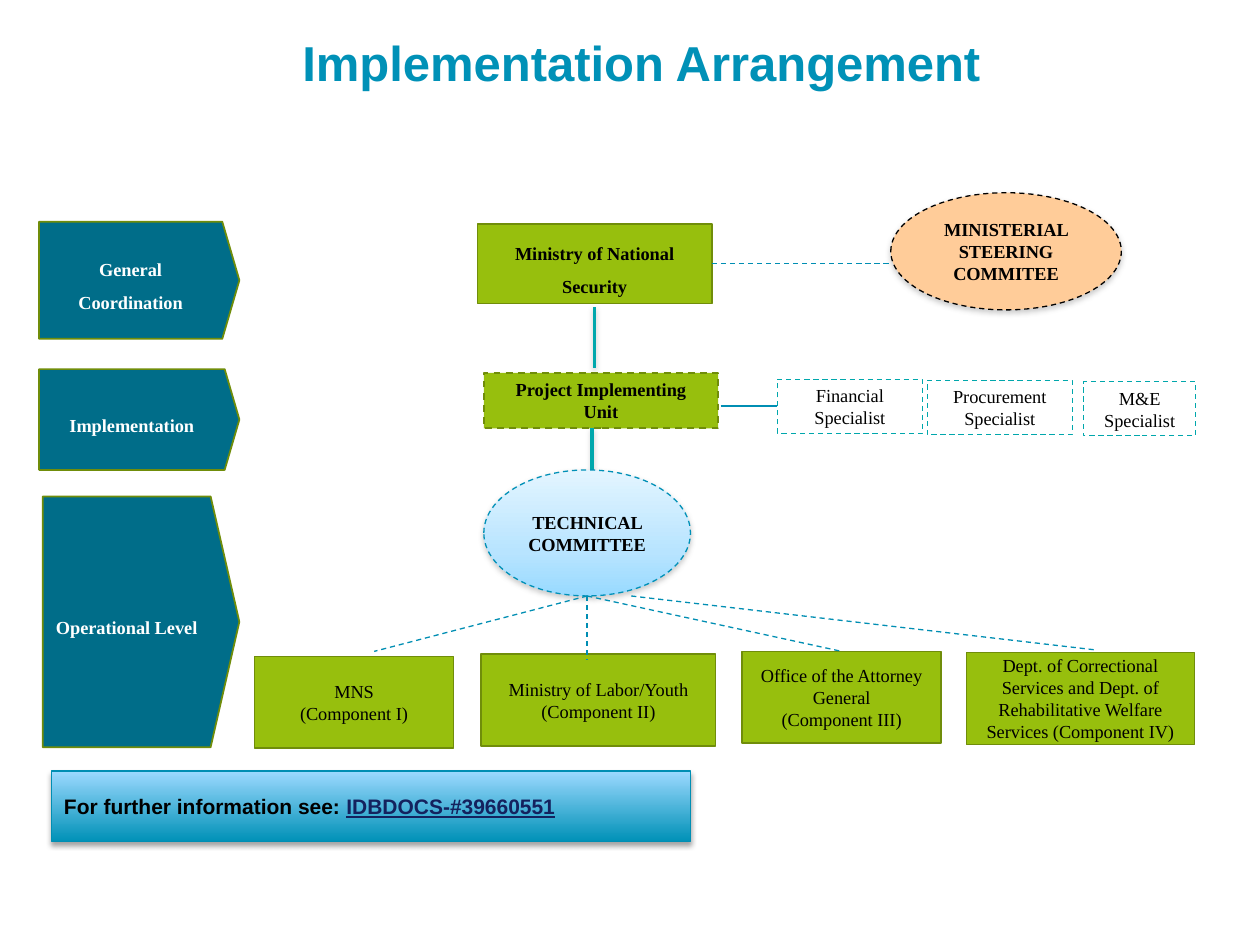
from copy import deepcopy
from dataclasses import dataclass

from pptx import Presentation
from pptx.dml.color import RGBColor
from pptx.enum.dml import MSO_LINE
from pptx.enum.shapes import MSO_CONNECTOR, MSO_SHAPE
from pptx.enum.text import MSO_ANCHOR, PP_ALIGN
from pptx.oxml import parse_xml
from pptx.oxml.ns import nsdecls, qn
from pptx.util import Inches, Pt


@dataclass(frozen=True)
class Theme:
    title: str = "0091B7"
    level: str = "006D89"
    unit: str = "97BF0D"
    unit_edge: str = "708D0A"
    steering: str = "FFCC99"
    technical: tuple = ((0, "E3F5FF"), (0.65, "B8E4FF"), (1, "98DAFF"))
    reference: tuple = ((0, "0091B7"), (1, "9CD9FF"))
    link: str = "008EB3"
    technical_edge: str = "0090B7"
    trunk: str = "00A7AC"
    document: str = "14225E"
    black: str = "000000"
    white: str = "FFFFFF"
    grey: str = "808080"
    sans: str = "Arial"
    serif: str = "Times New Roman"
    title_size: float = 28
    label_size: float = 10.5
    reference_size: float = 12
    thin: float = 0.75
    edge: float = 1
    thick: float = 2


THEME = Theme()


@dataclass(frozen=True)
class Box:
    x: float
    y: float
    w: float
    h: float

    def inner(self, x, y, w, h):
        return Box(self.x + x, self.y + y, w, h)

    def inches(self):
        return [Inches(v) for v in (self.x, self.y, self.w, self.h)]


def add_run(paragraph, text, size, font, color, bold=False, underline=None):
    run = paragraph.add_run()
    run.text = text
    run.font.size = Pt(size)
    run.font.name = font
    run.font.bold = bold
    run.font.underline = underline
    run.font.color.rgb = RGBColor.from_string(color)


def style_line(line, color, width, dashed=False):
    line.color.rgb = RGBColor.from_string(color)
    line.width = Pt(width)
    if dashed:
        line.dash_style = MSO_LINE.DASH


def set_effects(item, color=None, alpha=38, distance=1.6):
    properties = item._element.spPr
    for effects in properties.findall(qn("a:effectLst")):
        properties.remove(effects)
    shadow = ""
    if color:
        shadow = (
            f'<a:outerShdw blurRad="{Pt(3.1)}" dist="{Pt(distance)}" dir="5400000" rotWithShape="0">'
            f'<a:srgbClr val="{color}"><a:alpha val="{alpha * 1000}"/></a:srgbClr></a:outerShdw>'
        )
    properties.append(parse_xml(f'<a:effectLst {nsdecls("a")}>{shadow}</a:effectLst>'))


def fill_gradient(shape, stops, angle):
    shape.fill.gradient()
    shape.fill.gradient_angle = angle
    stop_list = shape._element.spPr.find(".//" + qn("a:gsLst"))
    for _ in stops[2:]:
        stop_list.append(deepcopy(stop_list[-1]))
    for stop, (position, color) in zip(shape.fill.gradient_stops, stops):
        stop.position = position
        stop.color.rgb = RGBColor.from_string(color)


def add_block(slide, kind, box, edge, width, fill=None, dashed=False):
    block = slide.shapes.add_shape(kind, *box.inches())
    block.shadow.inherit = False
    if fill:
        block.fill.solid()
        block.fill.fore_color.rgb = RGBColor.from_string(fill)
    else:
        block.fill.background()
    style_line(block.line, edge, width, dashed)
    block.text_frame.word_wrap = True
    block.text_frame.vertical_anchor = MSO_ANCHOR.MIDDLE
    return block


def add_label(block, lines, color=THEME.black, bold=False, spacing=None):
    frame = block.text_frame
    for index, line in enumerate(lines):
        paragraph = frame.add_paragraph() if index else frame.paragraphs[0]
        paragraph.alignment = PP_ALIGN.CENTER
        if spacing:
            paragraph.line_spacing = spacing
        add_run(paragraph, line, THEME.label_size, THEME.serif, color, bold)


def add_link(slide, box, start, end, color=THEME.link, width=THEME.thin, dashed=False):
    ends = [Inches(v) for x, y in (start, end) for v in (box.x + x, box.y + y)]
    link = slide.shapes.add_connector(MSO_CONNECTOR.STRAIGHT, *ends)
    style_line(link.line, color, width, dashed)
    set_effects(link)
    return link


def add_title(slide, box):
    frame = slide.shapes.add_textbox(*box.inches()).text_frame
    frame.word_wrap = True
    frame.vertical_anchor = MSO_ANCHOR.MIDDLE
    heading = frame.paragraphs[0]
    heading.alignment = PP_ALIGN.CENTER
    add_run(heading, "Implementation Arrangement", THEME.title_size, THEME.sans, THEME.title, True)


def add_levels(slide, box):
    levels = [
        ("General Coordination", 0, 0, 0.93),
        ("Implementation", 0, 1.17, 0.8),
        ("Operational Level", 0.03, 2.18, 1.99),
    ]
    for name, x, y, height in levels:
        level = add_block(slide, MSO_SHAPE.RIGHT_ARROW, box.inner(x, y, box.w - x, height),
                          THEME.unit_edge, THEME.edge, THEME.level)
        level.adjustments[0] = 1
        level.adjustments[1] = 0.146
        add_label(level, [name], THEME.white, True, 1.5)


def add_coordination(slide, box):
    ministry = add_block(slide, MSO_SHAPE.RECTANGLE, box.inner(0, 0.25, 1.86, 0.63),
                         THEME.unit_edge, THEME.edge, THEME.unit)
    add_label(ministry, ["Ministry of National Security"], bold=True, spacing=1.5)
    steering = add_block(slide, MSO_SHAPE.OVAL, box.inner(3.28, 0, 1.83, 0.93),
                         THEME.black, THEME.thin, THEME.steering, True)
    set_effects(steering, THEME.grey)
    add_label(steering, ["MINISTERIAL STEERING COMMITEE"], bold=True)
    add_link(slide, box, (1.86, 0.56), (3.28, 0.56), dashed=True)


def add_implementation(slide, box):
    unit = add_block(slide, MSO_SHAPE.RECTANGLE, box.inner(0, 0, 1.86, 0.44),
                     THEME.unit_edge, THEME.edge, THEME.unit, True)
    add_label(unit, ["Project Implementing Unit"], bold=True)
    specialists = [("Financial", 2.33, 0.05, 1.15), ("Procurement", 3.52, 0.06, 1.15),
                   ("M&E", 4.76, 0.07, 0.89)]
    for field, x, y, width in specialists:
        specialist = add_block(slide, MSO_SHAPE.RECTANGLE, box.inner(x, y, width, 0.43),
                               THEME.trunk, THEME.thin, dashed=True)
        add_label(specialist, [f"{field} Specialist"])
    add_link(slide, box, (1.88, 0.26), (2.33, 0.26), width=THEME.edge)
    for start, end in [((0.88, -0.04), (0.88, -0.52)), ((0.86, 0.77), (0.86, 0.44))]:
        trunk = add_link(slide, box, start, end, THEME.trunk, THEME.thick)
        set_effects(trunk, THEME.grey)


def add_operations(slide, box):
    committee = add_block(slide, MSO_SHAPE.OVAL, box.inner(1.82, 0, 1.64, 1),
                          THEME.technical_edge, THEME.thin, dashed=True)
    fill_gradient(committee, THEME.technical, 270)
    set_effects(committee, THEME.grey)
    add_label(committee, ["TECHNICAL COMMITTEE"], bold=True)
    components = [
        (["MNS", "(Component I)"], 0, 1.48, 1.58, 2.64, (0.95, 1.44)),
        (["Ministry of Labor/Youth", "(Component II)"], 1.8, 1.46, 1.86, 2.64, (2.64, 1.51)),
        (["Office of the Attorney General", "(Component III)"], 3.87, 1.44, 1.58, 2.64, (4.66, 1.44)),
        (["Dept. of Correctional Services and Dept. of Rehabilitative Welfare Services (Component IV)"],
         5.65, 1.45, 1.81, 2.99, (6.69, 1.43)),
    ]
    for lines, x, y, width, origin, target in components:
        component = add_block(slide, MSO_SHAPE.RECTANGLE, box.inner(x, y, width, 0.73),
                              THEME.unit_edge, THEME.edge, THEME.unit)
        add_label(component, lines)
        add_link(slide, box, (origin, 1), target, dashed=True)


def add_reference(slide, box):
    reference = add_block(slide, MSO_SHAPE.RECTANGLE, box, THEME.link, THEME.thin)
    fill_gradient(reference, THEME.reference, 90)
    set_effects(reference, THEME.black, 35, 1.8)
    note = reference.text_frame.paragraphs[0]
    note.alignment = PP_ALIGN.LEFT
    add_run(note, "For further information see: ", THEME.reference_size, THEME.sans, THEME.black, True)
    add_run(note, "IDBDOCS-#39660551", THEME.reference_size, THEME.sans, THEME.document, True, True)


def main():
    deck = Presentation()
    deck.slide_width, deck.slide_height = Inches(10), Inches(7.5)
    slide = deck.slides.add_slide(deck.slide_layouts[6])
    add_title(slide, Box(0.59, 0.25, 9, 0.49))
    add_levels(slide, Box(0.31, 1.76, 1.59, 4.17))
    add_coordination(slide, Box(3.79, 1.53, 5.11, 0.93))
    add_implementation(slide, Box(3.84, 2.96, 5.65, 0.49))
    add_operations(slide, Box(2.02, 3.73, 7.46, 2.21))
    add_reference(slide, Box(0.41, 6.12, 5.07, 0.56))
    deck.save("out.pptx")


if __name__ == "__main__":
    main()
